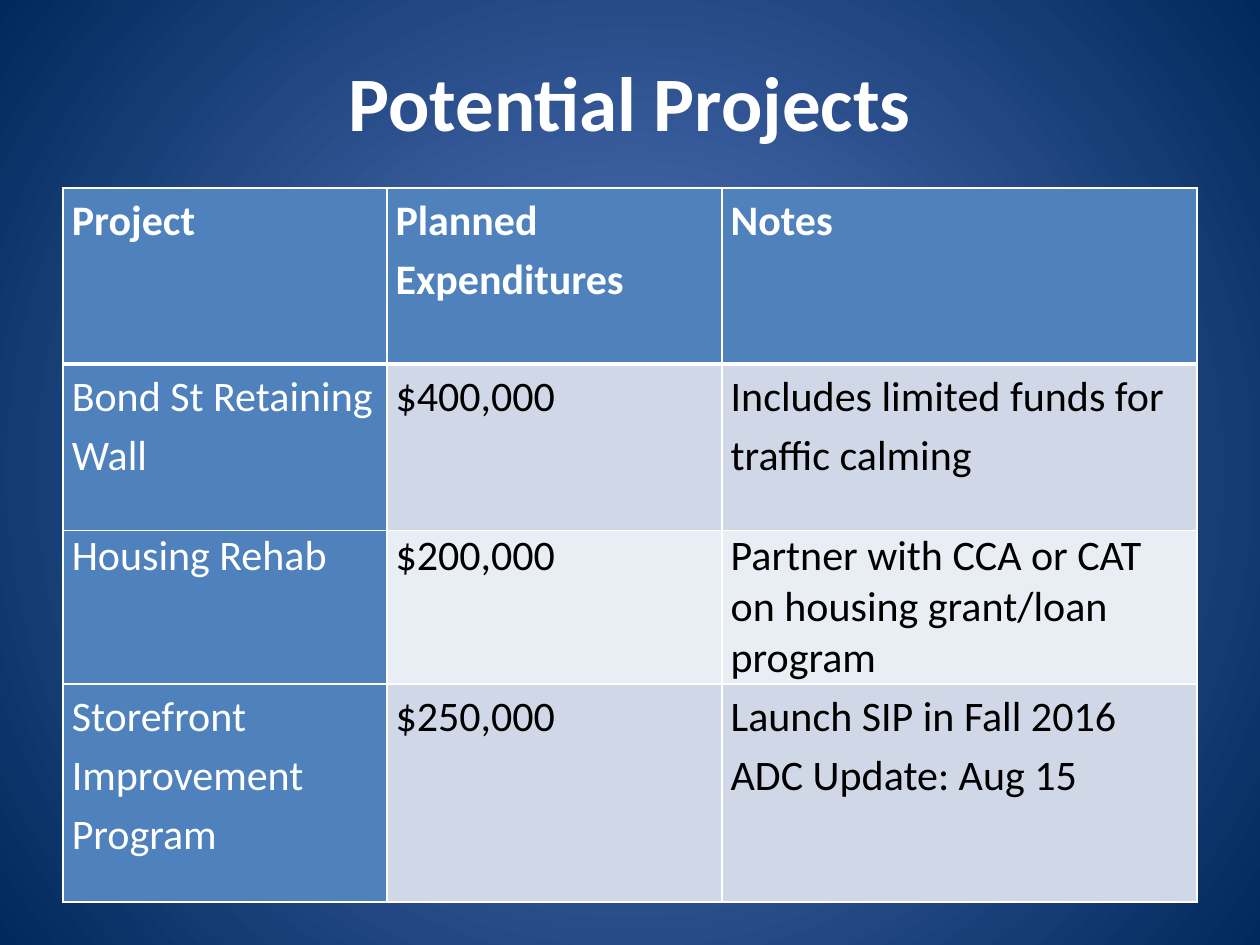
from lxml import etree
from pptx import Presentation
from pptx.dml.color import RGBColor
from pptx.enum.text import MSO_ANCHOR, PP_ALIGN
from pptx.oxml.ns import qn
from pptx.util import Inches, Pt

MIDDLE = MSO_ANCHOR.MIDDLE
CENTER = PP_ALIGN.CENTER
LEFT = PP_ALIGN.LEFT

COLORS = {
    "glow": "5E7CC5",
    "navy": "00295C",
    "blue": "4F81BD",
    "band": "D0D8E8",
    "pale": "E9EDF4",
    "white": "FFFFFF",
    "black": "000000",
}
COLUMN_WIDTHS = [2.57, 2.66, 3.77]
ROW_HEIGHTS = [1.4, 1.32, 1.22, 1.73]
LINE_SPACINGS = [1.15, 1.15, 1.0, 1.15]
PROJECTS = [
    ["Project", "Planned Expenditures", "Notes"],
    ["Bond St Retaining Wall", "$400,000", "Includes limited funds for traffic calming"],
    ["Housing Rehab", "$200,000", "Partner with CCA or CAT on housing grant/loan program"],
    ["Storefront Improvement Program", "$250,000", "Launch SIP in Fall 2016\nADC Update: Aug 15"],
]


def color(name):
    return RGBColor.from_string(COLORS[name])


def write_text(frame, text, size=24, ink="white", bold=False, align=LEFT, spacing=1.0):
    frame.word_wrap = True
    for index, line in enumerate(text.split("\n")):
        para = frame.add_paragraph() if index else frame.paragraphs[0]
        para.alignment = align
        para.line_spacing = spacing
        span = para.add_run()
        span.text = line
        span.font.name = "Calibri"
        span.font.size = Pt(size)
        span.font.bold = bold
        span.font.color.rgb = color(ink)


class SlideBuilder:
    def __init__(self, page):
        self.page = page

    def background(self, inner, outer):
        fill = self.page.background.fill
        fill.gradient()
        for stop, name in zip(fill.gradient_stops, (inner, outer)):
            stop.color.rgb = color(name)
        linear = next(self.page.element.iter(qn("a:lin")))
        gradient = linear.getparent()
        circle = etree.SubElement(gradient, qn("a:path"), {"path": "circle"})
        center = dict.fromkeys("ltrb", "50000")
        etree.SubElement(circle, qn("a:fillToRect"), center)
        gradient.remove(linear)

    def title(self, text, left, top, width, height):
        box = self.page.shapes.add_textbox(
            Inches(left), Inches(top), Inches(width), Inches(height)
        )
        box.text_frame.vertical_anchor = MIDDLE
        write_text(box.text_frame, text, size=44, bold=True, align=CENTER)

    def borders(self, cell, top=1, bottom=1):
        properties = cell._tc.get_or_add_tcPr()
        for side, width in (("L", 1), ("R", 1), ("T", top), ("B", bottom)):
            line = etree.SubElement(properties, qn(f"a:ln{side}"), {"w": str(Pt(width))})
            solid = etree.SubElement(line, qn("a:solidFill"))
            etree.SubElement(solid, qn("a:srgbClr"), {"val": COLORS["white"]})

    def table(self, rows, left, top):
        frame = self.page.shapes.add_table(
            len(rows), len(COLUMN_WIDTHS), Inches(left), Inches(top),
            Inches(sum(COLUMN_WIDTHS)), Inches(sum(ROW_HEIGHTS)),
        )
        table = frame.table
        table.horz_banding = False
        for column, width in zip(table.columns, COLUMN_WIDTHS):
            column.width = Inches(width)
        for r, texts in enumerate(rows):
            table.rows[r].height = Inches(ROW_HEIGHTS[r])
            for c, text in enumerate(texts):
                cell = table.cell(r, c)
                heading = r == 0 or c == 0
                cell.margin_left = cell.margin_right = Inches(0.07)
                cell.margin_top = cell.margin_bottom = 0
                self.borders(cell, top=3 if r == 1 else 1, bottom=3 if r == 0 else 1)
                cell.fill.solid()
                shade = "band" if r % 2 else "pale"
                cell.fill.fore_color.rgb = color("blue" if heading else shade)
                write_text(
                    cell.text_frame, text, ink="white" if heading else "black",
                    bold=r == 0, spacing=LINE_SPACINGS[r],
                )


def main():
    deck = Presentation()
    deck.slide_width, deck.slide_height = Inches(10), Inches(7.5)
    builder = SlideBuilder(deck.slides.add_slide(deck.slide_layouts[6]))
    builder.background("glow", "navy")
    builder.title("Potential Projects", 0.5, 0.17, 9, 1.25)
    builder.table(PROJECTS, 0.5, 1.49)
    deck.save("out.pptx")


if __name__ == "__main__":
    main()
